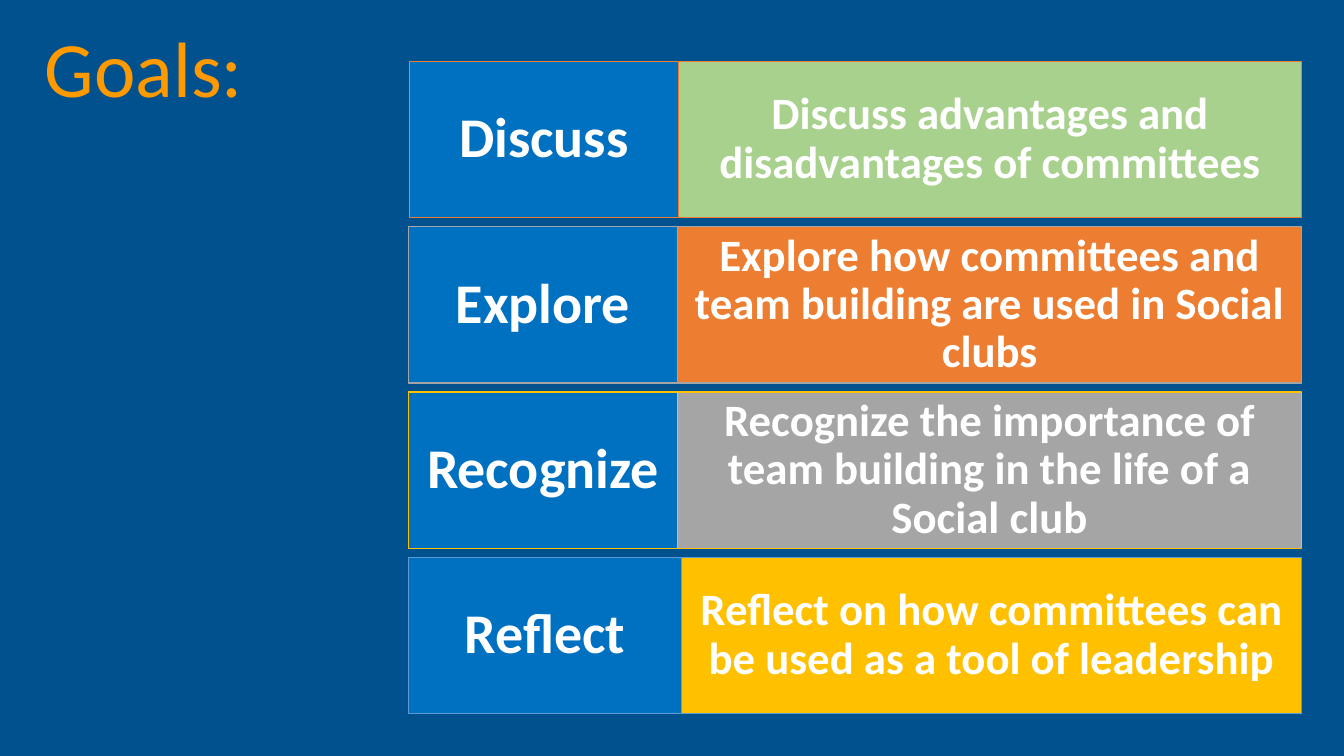
from lxml import etree
from pptx import Presentation
from pptx.dml.color import RGBColor
from pptx.enum.shapes import MSO_SHAPE
from pptx.enum.text import MSO_ANCHOR, PP_ALIGN
from pptx.oxml import parse_xml
from pptx.oxml.ns import nsdecls
from pptx.util import Inches, Pt

RECT = MSO_SHAPE.RECTANGLE
MIDDLE = MSO_ANCHOR.MIDDLE
CENTER, RIGHT = PP_ALIGN.CENTER, PP_ALIGN.RIGHT

THEME = {
    "font": "Calibri",
    "background": "00518E", "title": "FF9900", "text": "FFFFFF",
    "label": "0070C0", "green": "A9D18E", "orange": "ED7D31",
    "gray": "A5A5A5", "gold": "FFC000", "blue": "5B9BD5",
    "title_size": 56, "label_size": 40, "goal_size": 32,
}

# Grid of goal rows
TOP, ROW_HEIGHT, ROW_PITCH = 0.61, 1.55, 1.64
RIGHT_EDGE = 12.91


def color(name):
    return RGBColor.from_string(THEME[name])


def set_text(sp, text, size, fill, align, inset):
    tf = sp.text_frame
    tf.word_wrap = True
    tf.vertical_anchor = MIDDLE
    tf.margin_left = tf.margin_right = Inches(inset)
    tf.margin_top = tf.margin_bottom = 0
    p = tf.paragraphs[0]
    p.alignment = align
    p.line_spacing = 0.9
    r = p.add_run()
    r.text = text
    r.font.name = THEME["font"]
    r.font.size = Pt(THEME[size])
    r.font.color.rgb = color(fill)
    return r


prs = Presentation()
prs.slide_width, prs.slide_height = Inches(13.33), Inches(7.5)
s = prs.slides.add_slide(prs.slide_layouts[6])
s.background.fill.solid()
s.background.fill.fore_color.rgb = color("background")

# Title with a thin gold outline
title = s.shapes.add_textbox(Inches(0.3), Inches(0.12), Inches(2.21), Inches(1.2))
r = set_text(title, "Goals:", "title_size", "title", RIGHT, 0.1)
outline = parse_xml(f'<a:ln {nsdecls("a")} w="{Pt(0.75)}"/>')
solid = etree.SubElement(outline, outline.tag.replace("}ln", "}solidFill"))
etree.SubElement(solid, outline.tag.replace("}ln", "}srgbClr"), val=THEME["gold"])
r.font._element.insert(0, outline)

# Goal rows: label, goal, goal fill, line, left edge, split between the cells
goals = [
    ("Discuss", "Discuss advantages and disadvantages of committees",
     "green", "orange", 4.06, 6.73),
    ("Explore", "Explore how committees and team building are used in Social clubs",
     "orange", "gray", 4.05, 6.72),
    ("Recognize", "Recognize the importance of team building in the life of a Social club",
     "gray", "gold", 4.05, 6.72),
    ("Reflect", "Reflect on how committees can be used as a tool of leadership",
     "gold", "blue", 4.05, 6.76),
]
for row, (label, goal, fill, line, left, split) in enumerate(goals):
    cells = [
        (goal, split, RIGHT_EDGE, fill, "goal_size", 0.12),
        (label, left, split, "label", "label_size", 0.08),
    ]
    for text, start, end, cell_fill, size, inset in cells:
        sp = s.shapes.add_shape(RECT, Inches(start), Inches(TOP + row * ROW_PITCH),
                                Inches(end - start), Inches(ROW_HEIGHT))
        sp.shadow.inherit = False
        sp.fill.solid()
        sp.fill.fore_color.rgb = color(cell_fill)
        sp.line.color.rgb = color(line)
        sp.line.width = Pt(1)
        r = set_text(sp, text, size, "text", CENTER, inset)
        r.font.bold = True

prs.save("out.pptx")
